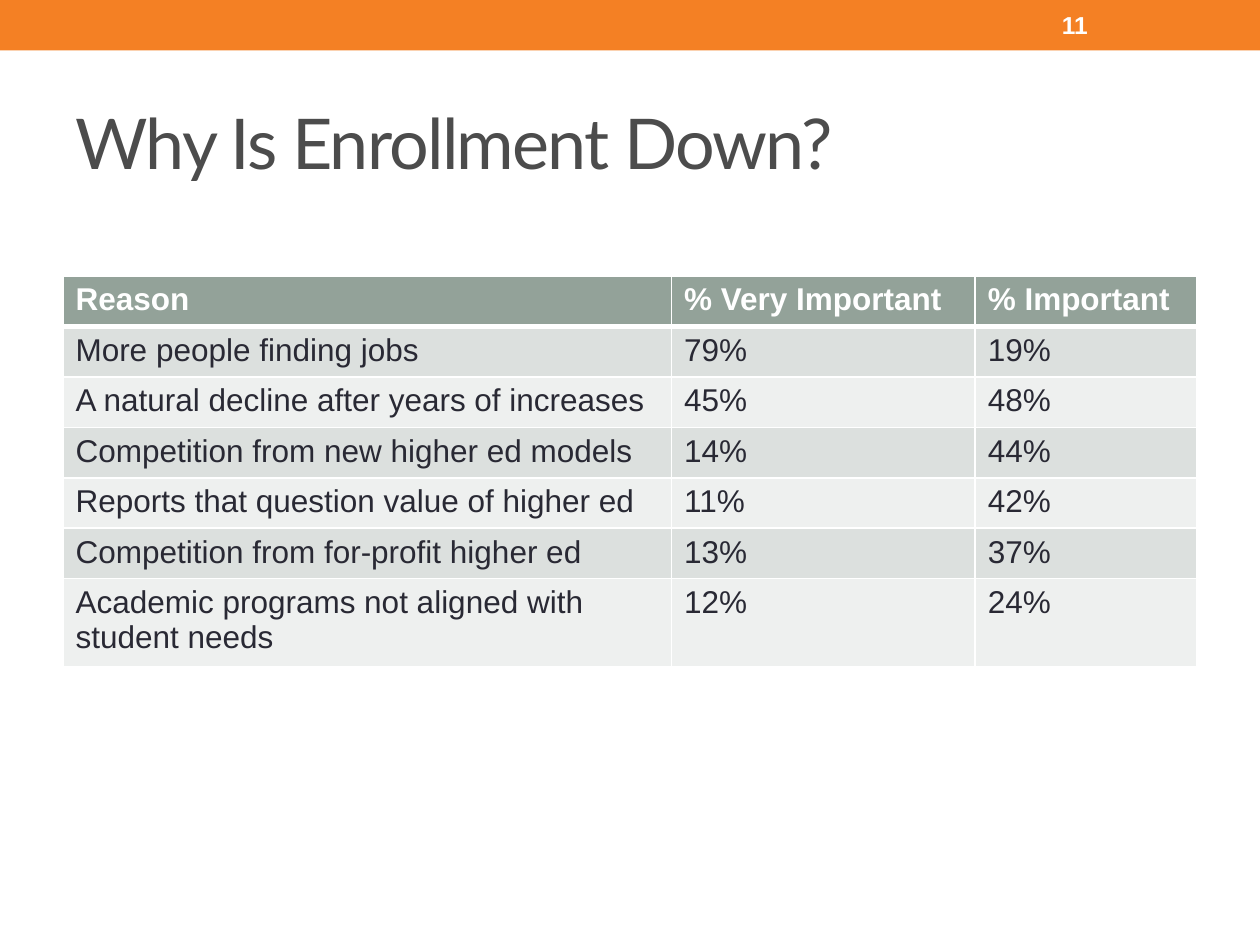
from pptx import Presentation
from pptx.dml.color import RGBColor
from pptx.enum.shapes import MSO_SHAPE as Shape
from pptx.enum.text import MSO_ANCHOR as Anchor
from pptx.oxml import parse_xml
from pptx.oxml.ns import nsdecls
from pptx.util import Inches, Pt

WIDTH, HEIGHT = 10, 7.5
MARGIN = WIDTH * 0.05
COLUMN_WIDTHS = [4.83, 2.41, 1.76]
ROW_HEIGHT = 0.37
WHITE, ORANGE, GREY, INK = "FFFFFF", "F48024", "4C4C4C", "292934"
HEADER_FILL, BANDS = "93A299", ["DCE0DE", "EEF0EF"]
REASONS = [
    ("Reason", "% Very Important", "% Important"),
    ("More people finding jobs", "79%", "19%"),
    ("A natural decline after years of increases", "45%", "48%"),
    ("Competition from new higher ed models", "14%", "44%"),
    ("Reports that question value of higher ed", "11%", "42%"),
    ("Competition from for-profit higher ed", "13%", "37%"),
    ("Academic programs not aligned with student needs", "12%", "24%"),
]


def color(value):
    return RGBColor.from_string(value)


def paint(target, value):
    target.fill.solid()
    target.fill.fore_color.rgb = color(value)


def write(text_frame, text, size, font_name, value, bold=False):
    text_frame.text = text
    run = text_frame.paragraphs[0].runs[0]
    run.font.size = Pt(size)
    run.font.name = font_name
    run.font.bold = bold
    run.font.color.rgb = color(value)
    return run


def add_band(slide, height, value):
    band = slide.shapes.add_shape(Shape.RECTANGLE, 0, 0, Inches(WIDTH), Inches(height))
    band.shadow.inherit = False
    paint(band, value)
    band.line.fill.background()


def add_text(slide, box, *style):
    text_frame = slide.shapes.add_textbox(*map(Inches, box)).text_frame
    text_frame.word_wrap = True
    text_frame.vertical_anchor = Anchor.MIDDLE
    return write(text_frame, *style)


def set_borders(cell, top, bottom):
    properties = cell._tc.get_or_add_tcPr()
    widths = {"lnL": 1, "lnR": 1, "lnT": top, "lnB": bottom}
    for position, (side, width) in enumerate(widths.items()):
        properties.insert(position, parse_xml(
            f'<a:{side} {nsdecls("a")} w="{Pt(width)}"><a:solidFill>'
            f'<a:srgbClr val="{WHITE}"/></a:solidFill></a:{side}>'))


def add_reason_table(slide, left, top):
    table = slide.shapes.add_table(
        len(REASONS), len(COLUMN_WIDTHS), Inches(left), Inches(top),
        Inches(sum(COLUMN_WIDTHS)), Inches(ROW_HEIGHT * len(REASONS))).table
    for column, width in zip(table.columns, COLUMN_WIDTHS):
        column.width = Inches(width)
    for index, (row, texts) in enumerate(zip(table.rows, REASONS)):
        row.height = Inches(ROW_HEIGHT)
        header = index == 0
        for cell, text in zip(row.cells, texts):
            paint(cell, HEADER_FILL if header else BANDS[(index - 1) % 2])
            write(cell.text_frame, text, 18, "Arial", WHITE if header else INK, header)
            set_borders(cell, 3 if index == 1 else 1, 3 if header else 1)


def main():
    presentation = Presentation()
    presentation.slide_width = Inches(WIDTH)
    presentation.slide_height = Inches(HEIGHT)
    slide = presentation.slides.add_slide(presentation.slide_layouts[6])
    add_band(slide, 0.4, ORANGE)
    title = add_text(slide, (MARGIN, 0.58, WIDTH - 2 * MARGIN, 1.08),
                     "Why Is Enrollment Down?", 40, "Lato", GREY)
    title.font._element.set("spc", "-100")
    add_reason_table(slide, MARGIN, 2.19)
    add_text(slide, (8.33, 0.02, 1.17, 0.36), "11", 14, "Arial", WHITE, True)
    presentation.save("out.pptx")


if __name__ == "__main__":
    main()
